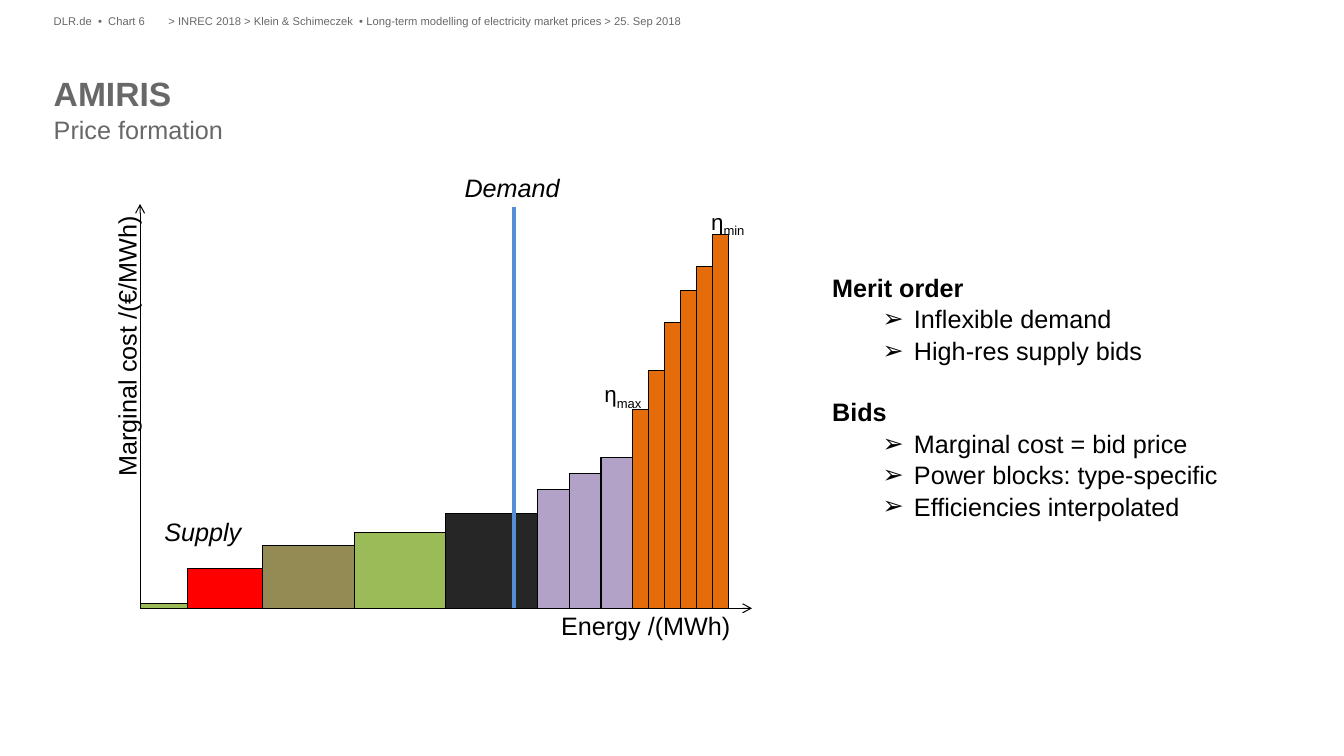
from pptx import Presentation
from pptx.dml.color import RGBColor
from pptx.enum.shapes import MSO_CONNECTOR as CONN, MSO_SHAPE as SHAPE
from pptx.enum.text import MSO_ANCHOR as ANCHOR, PP_ALIGN as ALIGN
from pptx.oxml.ns import qn
from pptx.util import Pt
from lxml.etree import SubElement

GREY, BLACK, BLUE = "686868", "000000", "558ED5"
GREEN, LILAC, ORANGE = "9BBB59", "B3A2C7", "E46C0A"
rgb = RGBColor.from_string


def write(sp, text, size, color=BLACK, wrap=True):
    tf = sp.text_frame
    tf.margin_left = tf.margin_top = tf.margin_right = tf.margin_bottom = 0
    tf.word_wrap = wrap
    tf.vertical_anchor = ANCHOR.TOP
    tf.text = text
    for p in tf.paragraphs:
        p.line_spacing = 1.04
        p.alignment = ALIGN.LEFT
        for r in p.runs:
            r.font.name, r.font.size = "Arial", Pt(size)
            r.font.color.rgb = rgb(color)
    return tf


def draw_line(x1, y1, x2, y2, color, width, arrow=False):
    cn = s.shapes.add_connector(CONN.STRAIGHT, Pt(x1), Pt(y1), Pt(x2), Pt(y2))
    cn.line.color.rgb = rgb(color)
    cn.line.width = Pt(width)
    if arrow:
        SubElement(cn.line._get_or_add_ln(), qn("a:tailEnd"), type="arrow")
    SubElement(cn._element.spPr, qn("a:effectLst"))


prs = Presentation()
prs.slide_width, prs.slide_height = Pt(960.5), Pt(540)
s = prs.slides.add_slide(prs.slide_layouts[5])

# Title and subtitle
title = s.shapes.title
title.left, title.top, title.width, title.height = Pt(38.4), Pt(51.1), Pt(883.4), Pt(58.3)
tf = write(title, "AMIRIS\vPrice formation", 24, GREY)
name, subtitle = tf.paragraphs[0].runs
name.font.bold = True
subtitle.font.bold = False
subtitle.font.size = Pt(18)

# Header line
for x, w, text in [
    (38.4, 82, "DLR.de  •  Chart 6"),
    (120.4, 801, "> INREC 2018 > Klein & Schimeczek  • Long-term modelling of "
                 "electricity market prices > 25. Sep 2018"),
]:
    write(s.shapes.add_textbox(Pt(x), Pt(10), Pt(w), Pt(11.5)), text, 8, GREY)

# Axes
X0, Y0 = 100.1, 434.5
draw_line(X0, Y0, 537.4, Y0, BLACK, 0.75, arrow=True)
draw_line(X0, Y0, X0, 145.7, BLACK, 0.75, arrow=True)

# Supply blocks in merit order: colour, block width, heights
x = X0
for color, w, heights in [
    (GREEN, 33.8, [3.4]),
    ("FF0000", 54, [28.4]),
    ("948A54", 65.4, [45]),
    (GREEN, 65.4, [54]),
    ("262626", 65.4, [68]),
    (LILAC, 22.7, [85, 96.4, 108]),
    (ORANGE, 11.4, [142, 170, 204, 227, 244, 266.7]),
]:
    for h in heights:
        bar = s.shapes.add_shape(SHAPE.RECTANGLE, Pt(x), Pt(Y0 - h), Pt(w), Pt(h))
        bar.shadow.inherit = False
        bar.fill.solid()
        bar.fill.fore_color.rgb = rgb(color)
        bar.line.color.rgb = rgb(BLACK)
        bar.line.width = Pt(0.75)
        x += w

# Demand line
draw_line(367.4, 147.8, 367.4, Y0, BLUE, 3)

# Curve and axis labels
for x, y, w, text, italic in [
    (332, 122.4, 68.4, "Demand", True),
    (117.4, 368, 55.4, "Supply", True),
    (401, 435, 122.4, "Energy /(MWh)", False),
]:
    sp = s.shapes.add_textbox(Pt(x), Pt(y), Pt(w), Pt(21.6))
    write(sp, text, 18, wrap=False).paragraphs[0].runs[0].font.italic = italic

sp = s.shapes.add_textbox(Pt(-23.8), Pt(257), Pt(226.8), Pt(21.6))
sp.rotation = 270
write(sp, "Marginal cost /(€/MWh)", 18).paragraphs[0].alignment = ALIGN.RIGHT

# Efficiency labels
for x, y, sub in [(508.3, 147.6, "min"), (432, 270.7, "max")]:
    sp = s.shapes.add_textbox(Pt(x), Pt(y), Pt(31), Pt(19.4))
    p = write(sp, "ƞ", 16).paragraphs[0]
    r = p.add_run()
    r.text = sub
    r.font.name, r.font.size = "Arial", Pt(16)
    r.font.color.rgb = rgb(BLACK)
    r._r.get_or_add_rPr().set("baseline", "-25000")

# Explanations
sections = {
    "Merit order": ["Inflexible demand", "High-res supply bids"],
    "Bids": ["Marginal cost = bid price", "Power blocks: type-specific",
             "Efficiencies interpolated"],
}
lines = [t for head, points in sections.items() for t in (head, *points)]
sp = s.shapes.add_textbox(Pt(594.7), Pt(193.7), Pt(357), Pt(174.2))
for i, p in enumerate(write(sp, "\n".join(lines), 18).paragraphs):
    if p.text in sections:
        p.runs[0].font.bold = True
        if i:
            p.space_before = Pt(21.5)
    else:
        p.level = 1
        pPr = p._p.get_or_add_pPr()
        pPr.set("marL", str(Pt(58.5)))
        pPr.set("indent", str(Pt(-22.5)))
        SubElement(pPr, qn("a:buFont"), typeface="Arial")
        SubElement(pPr, qn("a:buChar"), char="➢")

prs.save("out.pptx")
